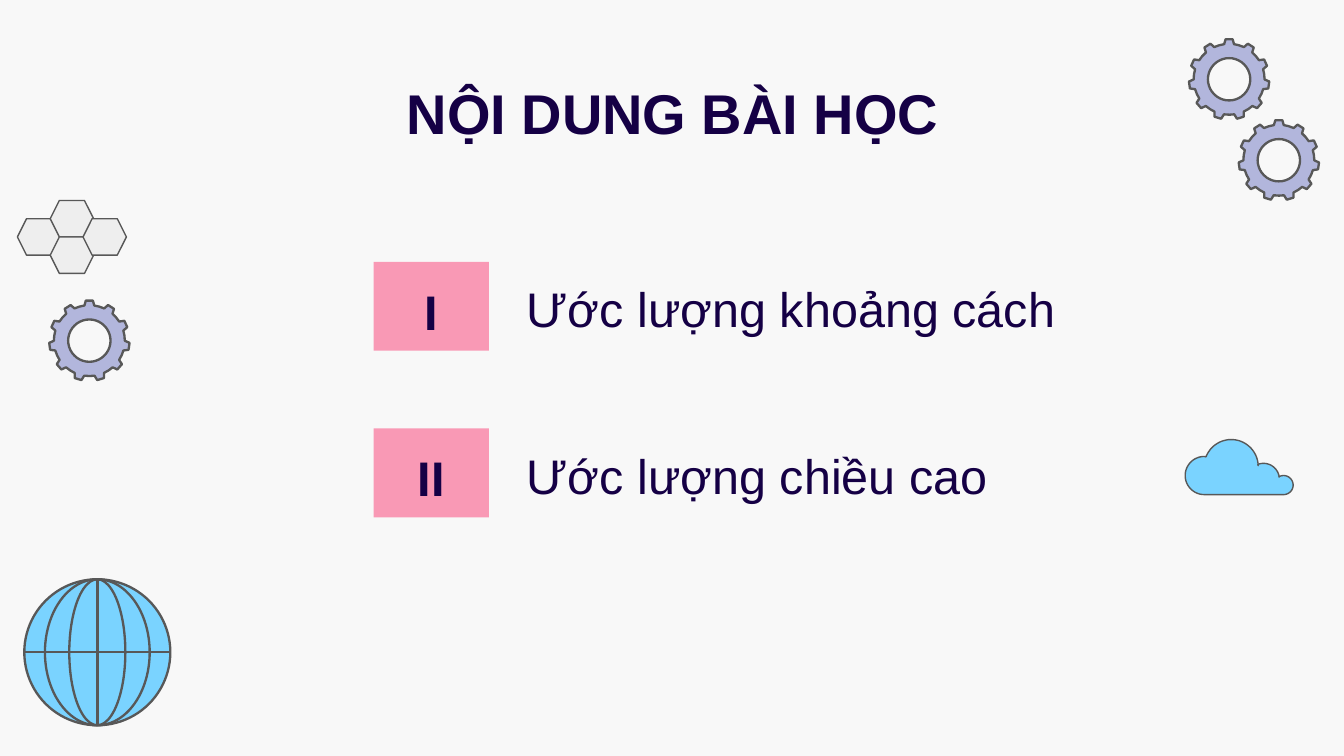
from math import cos, radians, sin

from pptx import Presentation
from pptx.dml.color import RGBColor
from pptx.enum import shapes as sh, text as tx
from pptx.oxml.ns import qn
from pptx.util import Cm, Pt

# Content
TITLE = "NỘI DUNG BÀI HỌC"
ITEMS = [("I", "Ước lượng khoảng cách", 11.3),
         ("II", "Ước lượng chiều cao", 9.55)]  # number, text, text width

# Decorations, in cm
GEARS = [(23.23, 1.5), (24.17, 3.03), (1.69, 6.44)]  # centres
CELLS = [(0, 0.5), (1, 0), (1, 1), (2, 0.5)]  # column, row
CLOUD = [(22.76, 8.99, 0.36, 90, 270), (23.27, 8.82, 0.51, 201, 358),
         (23.88, 9.06, 0.3, 249, 352), (24.26, 9.17, 0.18, 240, 450)]
GLOBE = (1.84, 12.33, 2.76)  # centre and diameter
RINGS = [2.76, 1.98, 1.06]

HUES = {"back": "F8F8F8", "ink": "150045", "pink": "F999B5", "line": "585858",
        "gear": "B2B6DC", "cell": "EEEEEE", "blue": "7AD3FF"}


def hue(name):
    return RGBColor.from_string(HUES[name])


def paint(shape, fill=None, line=None):
    """Set fill and outline; line is a width in points."""
    shape.shadow.inherit = False
    if fill:
        shape.fill.solid()
        shape.fill.fore_color.rgb = hue(fill)
    else:
        shape.fill.background()
    if line:
        shape.line.color.rgb = hue("line")
        shape.line.width = Pt(line)
    else:
        shape.line.fill.background()


def write(shape, words, size=26, bold=False, align="LEFT", anchor="TOP", space=1.0):
    frame = shape.text_frame
    frame.word_wrap = True
    frame.auto_size = tx.MSO_AUTO_SIZE.NONE
    frame.vertical_anchor = getattr(tx.MSO_ANCHOR, anchor)
    for side in ("left", "top", "right", "bottom"):
        setattr(frame, "margin_" + side, Cm(0.25))
    frame.text = words
    para = frame.paragraphs[0]
    props = para._p.get_or_add_pPr()
    props.set("marL", "0")
    props.set("indent", "0")
    props.append(props.makeelement(qn("a:buNone"), {}))
    para.alignment = getattr(tx.PP_ALIGN, align)
    para.line_spacing = space
    para.space_before = Pt(0)
    font = para.runs[0].font
    font.name, font.size, font.bold = "Arial", Pt(size), bold
    font.color.rgb = hue("ink")


def place(shape, *box):
    shape.left, shape.top, shape.width, shape.height = map(Cm, box)


def add(kind, *box):
    return slide.shapes.add_shape(kind, *map(Cm, box))


def polar(x, y, size, angle):
    turn = radians(angle)
    return Cm(x + size * cos(turn)), Cm(y + size * sin(turn))


def arc(x, y, size, start, end, steps=40):
    return [polar(x, y, size, start + (end - start) * i / steps)
            for i in range(steps + 1)]


def outline(*loops):
    pen = slide.shapes.build_freeform(*loops[0][0])
    for i, loop in enumerate(loops):
        if i:
            pen.move_to(*loop[0])
        pen.add_line_segments(loop[1:], close=True)
    return pen.convert_to_shape()


def gear(x, y, teeth=11):
    rim = []
    for i in range(teeth):
        mid = -90 + 360 * i / teeth
        rim += [polar(x, y, size, mid + turn) for size, turn in
                ((0.67, -8), (0.76, -5), (0.76, 5), (0.67, 8), (0.67, 16))]
    paint(outline(rim, arc(x, y, 0.4, 360, 0)), "gear", 1.25)


def wire(x1, y1, x2, y2):
    line = slide.shapes.add_connector(sh.MSO_CONNECTOR.STRAIGHT,
                                      *map(Cm, (x1, y1, x2, y2)))
    line.line.color.rgb = hue("line")
    line.line.width = Pt(1.25)
    props = line._element.spPr
    props.append(props.makeelement(qn("a:effectLst"), {}))


deck = Presentation()
deck.slide_width, deck.slide_height = Cm(25.4), Cm(14.29)
slide = deck.slides.add_slide(deck.slide_layouts[3])  # title and two bodies
slide.background.fill.solid()
slide.background.fill.fore_color.rgb = hue("back")

# Gears
for spot in GEARS:
    gear(*spot)

# Honeycomb
for col, row in CELLS:
    paint(add(sh.MSO_SHAPE.HEXAGON, 0.33 + 0.62 * col, 3.79 + 0.69 * row, 0.82, 0.69),
          "cell", 0.75)

# Globe
x, y, size = GLOBE
for width in RINGS:
    paint(add(sh.MSO_SHAPE.OVAL, x - width / 2, y - size / 2, width, size),
          "blue" if width == size else None, 1.25)
wire(x, y - size / 2, x, y + size / 2)
wire(x - size / 2, y, x + size / 2, y)

# Cloud
paint(outline([dot for part in CLOUD for dot in arc(*part)]), "blue", 0.75)

# Title and numbered items
title, *bodies = slide.placeholders
place(title, 2.01, 1.24, 21.41, 1.6)
write(title, TITLE, size=30, bold=True, align="CENTER")
for i, (body, (mark, words, width)) in enumerate(zip(bodies, ITEMS)):
    top = 4.95 + 3.15 * i
    place(body, 9.7, top + 0.33, width, 1.35)
    write(body, words, anchor="BOTTOM", space=1.15)
    box = add(sh.MSO_SHAPE.RECTANGLE, 7.06, top, 2.18, 1.68)
    paint(box, "pink")
    write(box, mark, bold=True, align="CENTER", anchor="MIDDLE", space=1.15)

deck.save("out.pptx")
